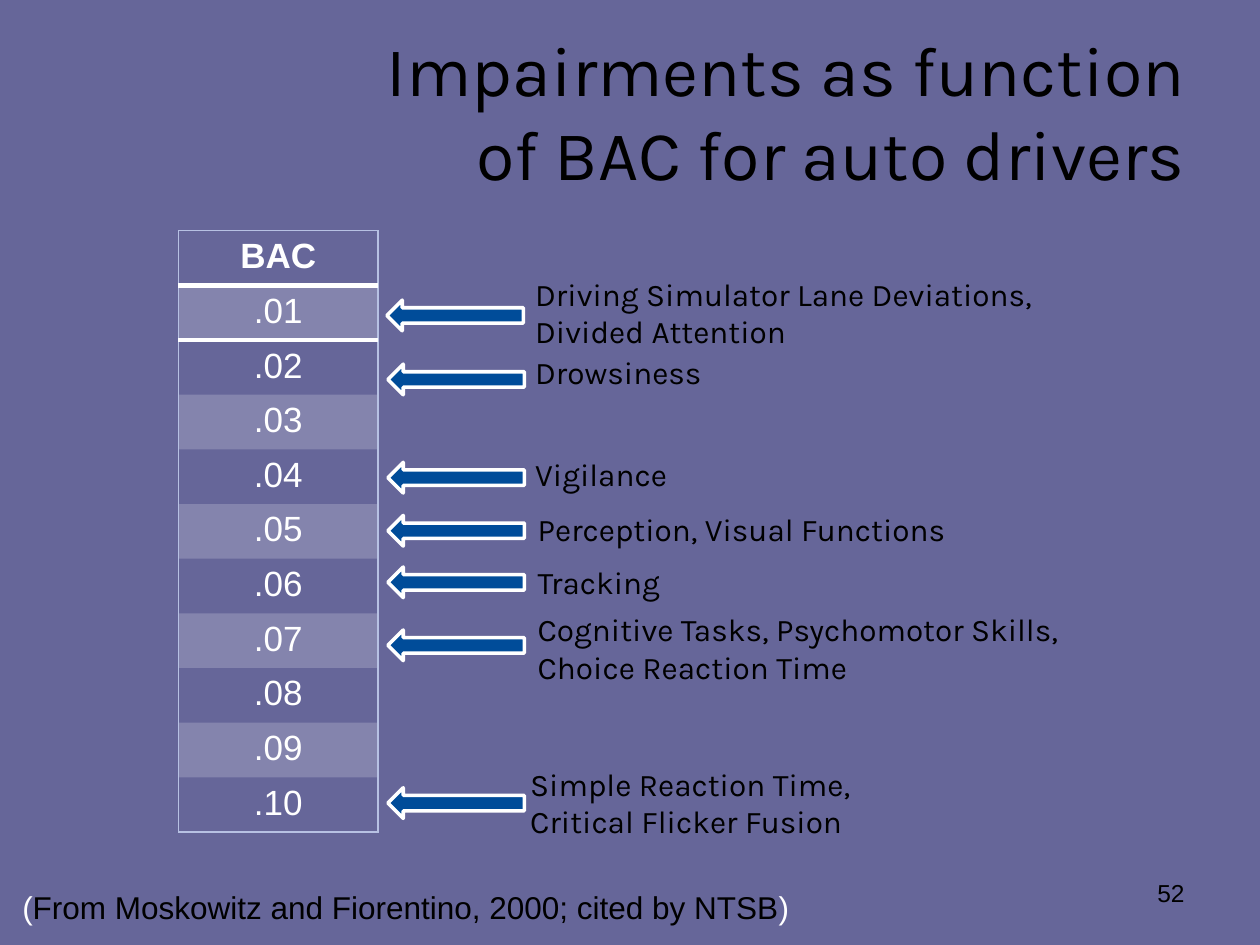
import lxml.etree
import pptx
import pptx.dml.color
import pptx.enum.shapes
import pptx.enum.text
import pptx.oxml
import pptx.oxml.ns
import pptx.util

Cm = pptx.util.Cm
Pt = pptx.util.Pt
ALIGN = pptx.enum.text.PP_ALIGN
ANCHOR = pptx.enum.text.MSO_ANCHOR
PLAIN = "{2D5ABB26-0587-4C30-8999-92F81FD0307C}"
LEVELS = [".01", ".02", ".03", ".04", ".05", ".06", ".07", ".08", ".09", ".10"]
EFFECTS = [
    ("Driving Simulator Lane Deviations, Divided Attention", 10.54, 5.41, 7.8, 6.05),
    ("Drowsiness", 10.54, 6.99, 7.82, 7.34),
    ("Vigilance", 10.54, 9.04, 7.82, 9.32),
    ("Perception, Visual Functions", 10.59, 10.16, 7.82, 10.39),
    ("Tracking", 10.59, 11.23, 7.82, 11.43),
    ("Cognitive Tasks, Psychomotor Skills, Choice Reaction Time", 10.59, 12.17, 7.82, 12.7),
    ("Simple Reaction Time,\nCritical Flicker Fusion", 10.44, 15.29, 7.82, 15.88),
]


def color(code):
    return pptx.dml.color.RGBColor.from_string(code)


def style(font, size, face, code, bold=False):
    font.size = Pt(size)
    font.name = face
    font.bold = bold
    font.color.rgb = color(code)


def add_text(shapes, text, box, size, face, align=ALIGN.LEFT, anchor=ANCHOR.TOP):
    frame = shapes.add_textbox(*map(Cm, box)).text_frame
    frame.word_wrap = True
    frame.vertical_anchor = anchor
    para = frame.paragraphs[0]
    para.text = text
    para.alignment = align
    style(para.font, size, face, "000000")


def add_arrow(shapes, left, top):
    kind = pptx.enum.shapes.MSO_SHAPE.LEFT_ARROW
    arrow = shapes.add_shape(kind, Cm(left), Cm(top), Cm(2.75), Cm(0.62))
    arrow.shadow.inherit = False
    arrow.fill.solid()
    arrow.fill.fore_color.rgb = color("004C99")
    arrow.line.color.rgb = color("FFFFFF")
    arrow.line.width = Pt(2)


def add_edge(cell, side, code, width):
    props = cell._tc.get_or_add_tcPr()
    edge = lxml.etree.SubElement(props, pptx.oxml.ns.qn("a:" + side), w=str(Pt(width)))
    fill = lxml.etree.SubElement(edge, pptx.oxml.ns.qn("a:solidFill"))
    lxml.etree.SubElement(fill, pptx.oxml.ns.qn("a:srgbClr"), val=code)


def fill_cell(cell, shaded):
    if not shaded:
        cell.fill.background()
        return
    cell.fill.solid()
    cell.fill.fore_color.rgb = color("FFFFFF")
    tint = cell._tc.tcPr.find(".//" + pptx.oxml.ns.qn("a:solidFill") + "[last()]/*")
    for node in cell._tc.tcPr.findall(pptx.oxml.ns.qn("a:solidFill")):
        tint = node[0]
    lxml.etree.SubElement(tint, pptx.oxml.ns.qn("a:alpha"), val="20000")


def add_levels(shapes):
    labels = ["BAC"] + LEVELS
    count = len(labels)
    high = Cm(1.06)
    table = shapes.add_table(count, 1, Cm(3.6), Cm(4.65), Cm(4.02), high * count).table
    table._tbl.tblPr[0].text = PLAIN
    table.horz_banding = False
    for row, label in enumerate(labels):
        table.rows[row].height = high
        cell = table.cell(row, 0)
        para = cell.text_frame.paragraphs[0]
        para.text = label
        para.alignment = ALIGN.CENTER
        style(para.font, 20, "Arial", "FFFFFF", row == 0)
        for side in ("lnL", "lnR"):
            add_edge(cell, side, "B7C1E3", 0.75)
        if row == 0:
            add_edge(cell, "lnT", "B7C1E3", 0.75)
            add_edge(cell, "lnB", "FFFFFF", 3)
        elif row == 1:
            add_edge(cell, "lnT", "FFFFFF", 3)
        elif row == count - 1:
            add_edge(cell, "lnB", "B7C1E3", 0.75)
        fill_cell(cell, row % 2 == 1)


def add_source(shapes):
    frame = shapes.add_textbox(Cm(0.2), Cm(17.78), Cm(19.25), Cm(1.02)).text_frame
    frame.word_wrap = True
    para = frame.paragraphs[0]
    parts = [
        ("(", "FFFFFF"),
        ("From Moskowitz and Fiorentino, 2000; cited by NTSB", "000000"),
        (")", "FFFFFF"),
    ]
    for text, code in parts:
        run = para.add_run()
        run.text = text
        style(run.font, 18, "Arial", code)


def main():
    deck = pptx.Presentation()
    deck.slide_width = Cm(25.4)
    deck.slide_height = Cm(19.05)
    slide = deck.slides.add_slide(deck.slide_layouts[6])
    slide.background.fill.solid()
    slide.background.fill.fore_color.rgb = color("666699")
    shapes = slide.shapes
    title = "Impairments as function\nof BAC for auto drivers"
    add_text(shapes, title, (1.06, 0.64, 23.07, 3.18), 40, "Karla", ALIGN.RIGHT, ANCHOR.MIDDLE)
    add_text(shapes, "52", (18.21, 17.57, 5.92, 1.14), 14, "Arial", ALIGN.RIGHT)
    add_levels(shapes)
    for text, left, top, tip, level in EFFECTS:
        group = shapes.add_group_shape().shapes
        add_arrow(group, tip, level)
        add_text(group, text, (left, top, 11.86, 1.02), 18, "Karla")
    add_source(shapes)


    deck.save("out.pptx")


if __name__ == "__main__":
    main()
